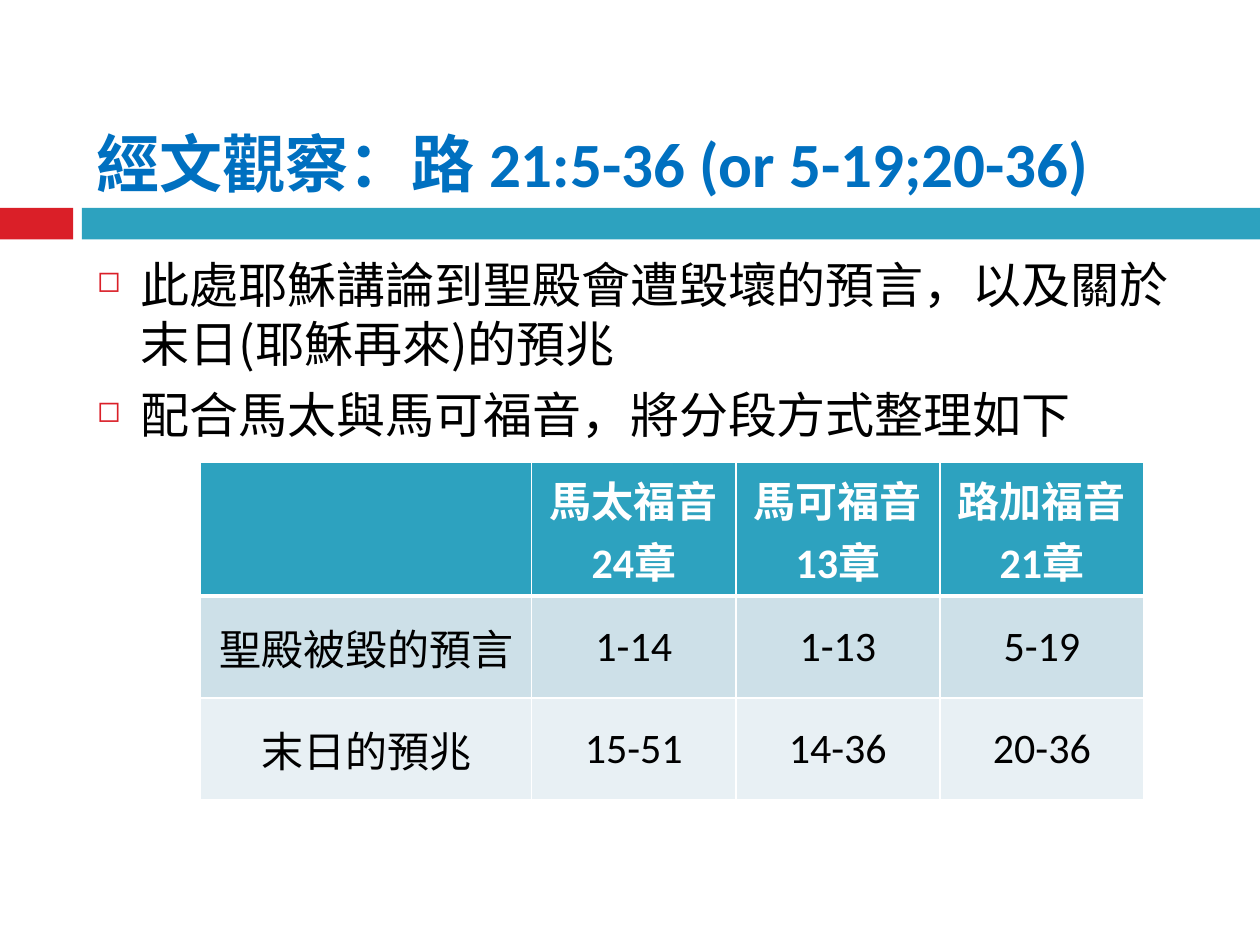
"""Build a Bible study slide comparing how three gospels divide one discourse."""
from dataclasses import dataclass

from lxml.etree import SubElement
from pptx import Presentation
from pptx.dml.color import RGBColor
from pptx.enum.shapes import MSO_SHAPE
from pptx.enum.text import MSO_ANCHOR, PP_ALIGN
from pptx.oxml.ns import qn
from pptx.util import Inches, Pt

TITLE = "經文觀察：路 21:5-36 (or 5-19;20-36)"
POINTS = [
    "此處耶穌講論到聖殿會遭毀壞的預言，以及關於末日(耶穌再來)的預兆",
    "配合馬太與馬可福音，將分段方式整理如下",
]
ROWS = [
    ["", "馬太福音\n24章", "馬可福音\n13章", "路加福音\n21章"],
    ["聖殿被毀的預言", "1-14", "1-13", "5-19"],
    ["末日的預兆", "15-51", "14-36", "20-36"],
]
COL_WIDTHS = [2.63, 1.62, 1.62, 1.62]
ROW_HEIGHTS = [1.06, 0.81, 0.81]


@dataclass(frozen=True)
class Theme:
    red: str = "DA1F28"
    teal: str = "2DA2BF"
    title: str = "0070C0"
    text: str = "000000"
    white: str = "FFFFFF"
    bands: tuple = ("2DA2BF", "CDE0E8", "E8F0F4")
    latin: str = "Calibri"
    cjk: str = "Noto Sans CJK TC"
    title_size: int = 36
    body_size: int = 28
    table_size: int = 24


T = Theme()


def style(p, size, color, font, bold=False):
    for r in p.runs:
        r.font.size, r.font.bold, r.font.name = Pt(size), bold, font
        r.font.color.rgb = RGBColor.from_string(color)
        SubElement(r.font._element, qn("a:ea"), typeface=T.cjk)


def add_bar(s, left, width, color):
    sp = s.shapes.add_shape(MSO_SHAPE.RECTANGLE, Inches(left), Inches(1.65),
                            Inches(width), Inches(0.25))
    sp.shadow.inherit = False
    sp.fill.solid()
    sp.fill.fore_color.rgb = RGBColor.from_string(color)
    sp.line.fill.background()


def add_text(s, top, height, text, anchor):
    sp = s.shapes.add_textbox(Inches(0.67), Inches(top), Inches(8.92), Inches(height))
    tf = sp.text_frame
    tf.word_wrap, tf.vertical_anchor, tf.text = True, anchor, text
    return tf


def add_bullet(p):
    p.space_before = Pt(7)
    pPr = p._p.get_or_add_pPr()
    pPr.set("marL", str(Inches(0.35)))
    pPr.set("indent", str(-Inches(0.35)))
    SubElement(SubElement(pPr, qn("a:buClr")), qn("a:srgbClr"), val=T.red)
    SubElement(pPr, qn("a:buSzPct"), val="60000")
    SubElement(pPr, qn("a:buChar"), char="◻")


def set_borders(cell, top, bottom):
    tcPr = cell._tc.get_or_add_tcPr()
    for side, width in (("L", 1), ("R", 1), ("T", top), ("B", bottom)):
        ln = SubElement(tcPr, qn(f"a:ln{side}"), w=str(Pt(width)))
        SubElement(SubElement(ln, qn("a:solidFill")), qn("a:srgbClr"), val=T.white)


def add_gospel_table(s):
    table = s.shapes.add_table(len(ROWS), len(COL_WIDTHS), Inches(1.59), Inches(3.67),
                               Inches(sum(COL_WIDTHS)), Inches(sum(ROW_HEIGHTS))).table
    for col, width in zip(table.columns, COL_WIDTHS):
        col.width = Inches(width)
    for i, (row, height) in enumerate(zip(ROWS, ROW_HEIGHTS)):
        table.rows[i].height = Inches(height)
        header = i == 0
        for j, text in enumerate(row):
            cell = table.cell(i, j)
            set_borders(cell, 3 if i == 1 else 1, 3 if header else 1)
            cell.fill.solid()
            cell.fill.fore_color.rgb = RGBColor.from_string(T.bands[i])
            cell.vertical_anchor = MSO_ANCHOR.MIDDLE
            cell.text_frame.text = text
            for p in cell.text_frame.paragraphs:
                p.alignment = PP_ALIGN.CENTER
                style(p, T.table_size, T.white if header else T.text, T.latin, header)


def main():
    prs = Presentation()
    prs.slide_width, prs.slide_height = Inches(10), Inches(7.5)
    s = prs.slides.add_slide(prs.slide_layouts[6])
    add_bar(s, 0, 0.58, T.red)
    add_bar(s, 0.65, 9.35, T.teal)
    tf = add_text(s, 0.17, 1.47, TITLE, MSO_ANCHOR.BOTTOM)
    style(tf.paragraphs[0], T.title_size, T.title, T.latin, True)
    tf = add_text(s, 1.97, 4.73, "\n".join(POINTS), MSO_ANCHOR.TOP)
    for p in tf.paragraphs:
        add_bullet(p)
        style(p, T.body_size, T.text, T.cjk)
    add_gospel_table(s)
    prs.save("out.pptx")


if __name__ == "__main__":
    main()
